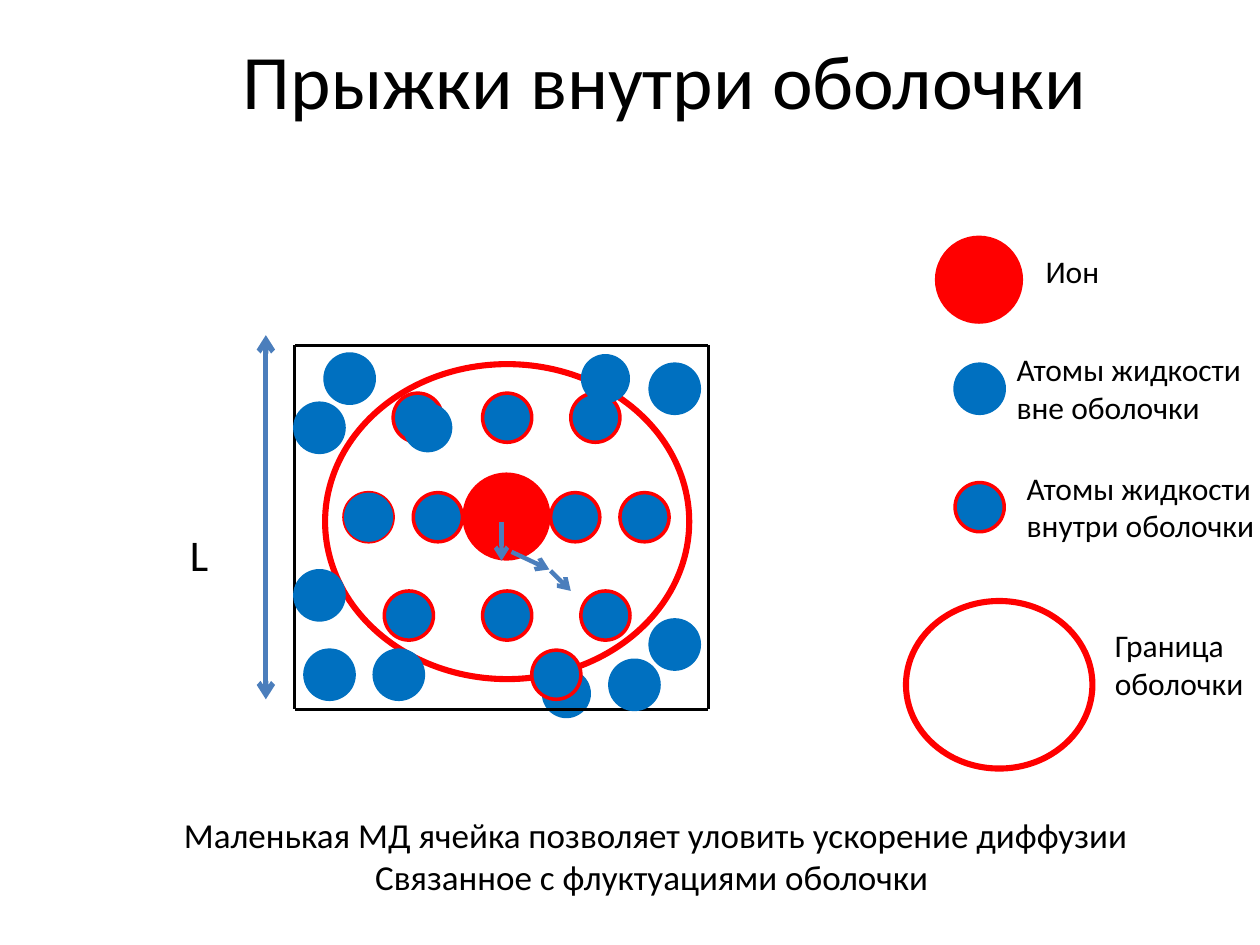
from pptx import Presentation
from pptx.dml.color import RGBColor
from pptx.enum.shapes import MSO_CONNECTOR, MSO_SHAPE
from pptx.enum.text import MSO_ANCHOR, PP_ALIGN
from pptx.oxml.ns import qn
from pptx.util import Inches, Pt
from lxml.etree import SubElement

RED, BLUE, ARROW, BLACK = "FF0000", "0070C0", "4B7EBC", "000000"
ATOM, ION = 0.39, 0.7

# Left and top of each atom
INNER = [(3.12, 3.12), (3.83, 3.12), (4.53, 3.12),
         (2.73, 3.91), (3.28, 3.91), (4.37, 3.91), (4.92, 3.91),
         (3.05, 4.69), (3.83, 4.69), (4.61, 4.69)]
CROSSING = [(2.73, 3.91), (3.2, 3.2), (4.61, 2.81)]
OUTER = [(2.34, 4.53), (4.84, 5.24), (2.42, 5.16), (2.97, 5.16),
         (2.58, 2.81), (2.34, 3.2), (5.16, 4.92), (5.16, 2.89)]
JUMPS = [(3.98, 4.14, 3.98, 4.45), (4.06, 4.38, 4.36, 4.52),
         (4.37, 4.53, 4.53, 4.69)]
LEFT, TOP, RIGHT, BOTTOM = 2.34, 2.74, 5.62, 5.63
CELL_SIDES = [(RIGHT, BOTTOM, LEFT, BOTTOM), (LEFT, TOP, LEFT, BOTTOM),
              (RIGHT, TOP, LEFT, TOP), (RIGHT, TOP, RIGHT, BOTTOM)]
LABELS = [("Ион", 8.2, 1.95, 0.63, 0.4),
          ("Атомы жидкости\nвне оболочки", 7.97, 2.73, 2.06, 0.71),
          ("Атомы жидкости\nвнутри оболочки", 8.05, 3.67, 2.06, 0.71),
          ("Граница\nоболочки", 8.75, 4.92, 1.23, 0.71)]


def color(value):
    return RGBColor.from_string(value)


def add_ellipse(s, x, y, w, h, fill=None, line=None, weight=2):
    sp = s.shapes.add_shape(MSO_SHAPE.OVAL, Inches(x), Inches(y),
                            Inches(w), Inches(h))
    sp.shadow.inherit = False
    if fill:
        sp.fill.solid()
        sp.fill.fore_color.rgb = color(fill)
    else:
        sp.fill.background()
    if line:
        sp.line.color.rgb = color(line)
        sp.line.width = Pt(weight)
    else:
        sp.line.fill.background()


def add_atom(s, x, y, line=None):
    add_ellipse(s, x, y, ATOM, ATOM, BLUE, line)


def add_ion(s, x, y):
    add_ellipse(s, x, y, ION, ION, RED)


def add_shell(s, x, y, w, h):
    add_ellipse(s, x, y, w, h, line=RED, weight=3.5)


def add_line(s, ends, line, weight, arrows=()):
    """Draw a straight line; arrows lists headEnd and/or tailEnd, in order."""
    cn = s.shapes.add_connector(MSO_CONNECTOR.STRAIGHT,
                                *(Inches(v) for v in ends))
    cn.line.color.rgb = color(line)
    cn.line.width = Pt(weight)
    ln = cn.line._get_or_add_ln()
    for end in arrows:
        SubElement(ln, qn(f"a:{end}"), type="arrow")
    SubElement(cn._element.spPr, qn("a:effectLst"))


def add_text(s, text, x, y, w, h, size, align=PP_ALIGN.LEFT,
             anchor=MSO_ANCHOR.TOP, wrap=False):
    tf = s.shapes.add_textbox(Inches(x), Inches(y),
                              Inches(w), Inches(h)).text_frame
    tf.word_wrap = wrap
    tf.vertical_anchor = anchor
    tf.text = text
    for p in tf.paragraphs:
        p.alignment = align
        p.font.name = "Calibri"
        p.font.size = Pt(size)
        p.font.color.rgb = color(BLACK)


def add_cell(s):
    add_ion(s, 3.67, 3.75)
    for x, y in INNER:
        add_atom(s, x, y, RED)
    add_shell(s, 2.58, 2.89, 2.89, 2.5)
    add_atom(s, 4.3, 5.31)
    add_atom(s, 4.22, 5.16, RED)
    for x, y in CROSSING:
        add_atom(s, x, y)
    for ends in JUMPS:
        add_line(s, ends, ARROW, 2.5, ["tailEnd"])
    for ends in CELL_SIDES:
        add_line(s, ends, BLACK, 1.75)
    for x, y in OUTER:
        add_atom(s, x, y, BLUE)
    add_line(s, (2.11, 5.55, 2.11, 2.66), ARROW, 3, ["headEnd", "tailEnd"])
    add_text(s, "L", 0.7, 4.14, 1.76, 0.52, 25, PP_ALIGN.CENTER, wrap=True)


def add_legend(s):
    add_ion(s, 7.42, 1.87)
    add_atom(s, 7.58, 2.89, BLUE)
    add_atom(s, 7.58, 3.83, RED)
    add_shell(s, 7.19, 4.77, 1.48, 1.33)
    for text, *box in LABELS:
        add_text(s, text, *box, 18)


def main():
    prs = Presentation()
    prs.slide_width, prs.slide_height = Inches(10), Inches(7.5)
    s = prs.slides.add_slide(prs.slide_layouts[6])
    add_text(s, "Прыжки внутри оболочки", 0.78, 0, 9, 1.25, 44,
             PP_ALIGN.CENTER, MSO_ANCHOR.MIDDLE, wrap=True)
    add_cell(s)
    add_legend(s)
    add_text(s, "Маленькая МД ячейка позволяет уловить ускорение диффузии\n"
                "Связанное с флуктуациями оболочки ",
             1.33, 6.41, 7.75, 0.77, 20, PP_ALIGN.CENTER)
    prs.save("out.pptx")


if __name__ == "__main__":
    main()
